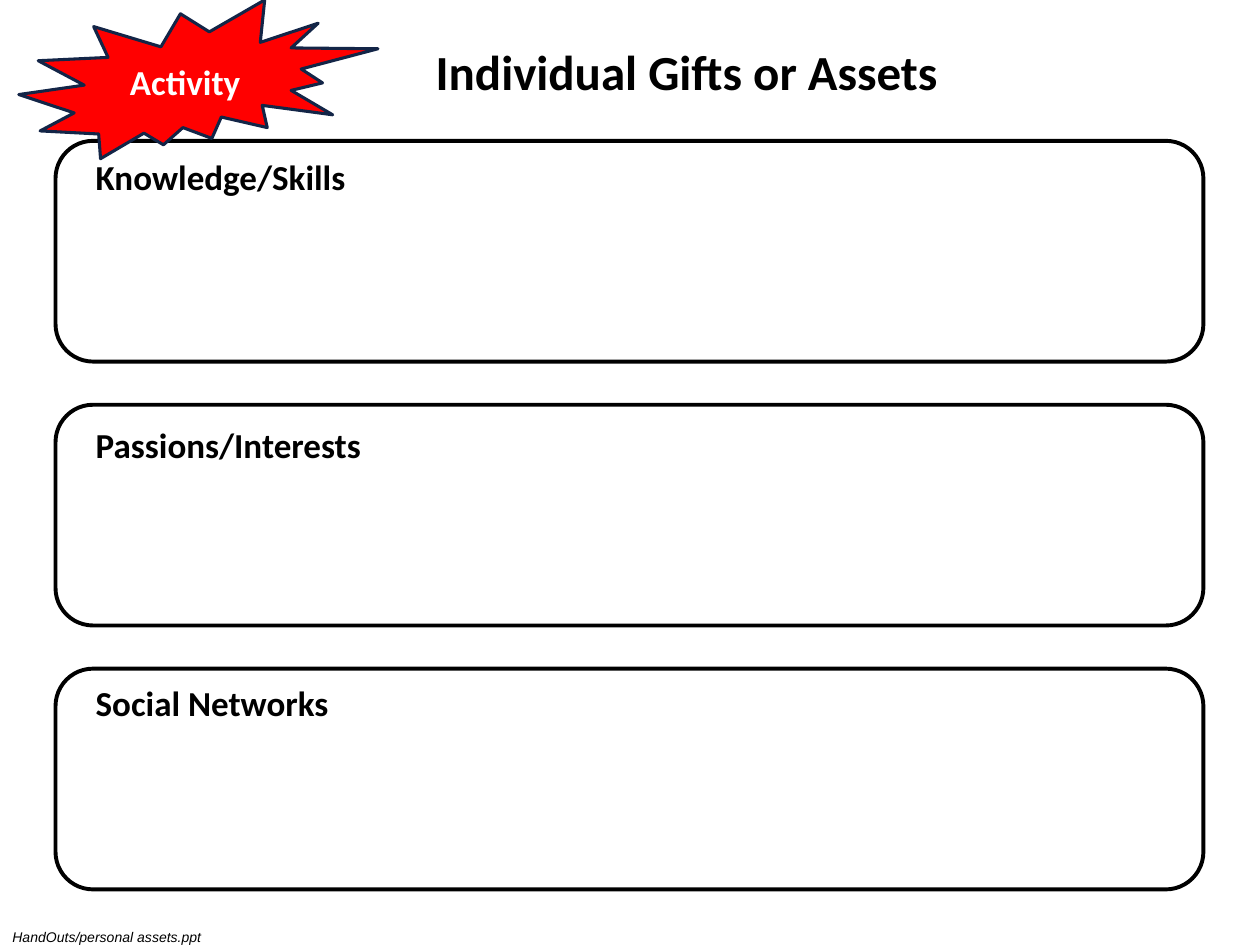
from dataclasses import dataclass

from pptx import Presentation
from pptx.dml.color import RGBColor
from pptx.enum.shapes import MSO_SHAPE
from pptx.enum.text import MSO_ANCHOR, PP_ALIGN
from pptx.util import Cm, Pt

TITLE = "Individual Gifts or Assets"
BADGE = "Activity"
FILE_NOTE = "HandOuts/personal assets.ppt"
# Heading of each answer panel and its drop below the panel's top edge, in cm
PANELS = [
    ("Knowledge/Skills", 0.18),
    ("Passions/Interests", 0.25),
    ("Social Networks", 0.13),
]

PANEL_LEFT, PANEL_TOP, PANEL_WIDTH, PANEL_HEIGHT = 1.12, 2.84, 23.14, 4.45
PANEL_PITCH = 5.32
HEADING_LEFT, HEADING_WIDTH, HEADING_HEIGHT = 1.68, 6.7, 1.12


@dataclass(frozen=True)
class Theme:
    ink: RGBColor = RGBColor(0, 0, 0)
    light: RGBColor = RGBColor(255, 255, 255)
    alert: RGBColor = RGBColor(255, 0, 0)
    alert_edge: RGBColor = RGBColor(0x13, 0x25, 0x47)
    font: str = "Calibri"
    note_font: str = "Arial"
    title_size: int = 28
    heading_size: int = 20
    note_size: int = 8
    panel_line: float = 2.25
    badge_line: float = 1.75


THEME = Theme()


def write(holder, text, size=THEME.heading_size, font=THEME.font, color=THEME.ink,
          bold=True, italic=False, align=PP_ALIGN.LEFT, anchor=MSO_ANCHOR.TOP, wrap=True):
    frame = holder.text_frame
    frame.word_wrap = wrap
    frame.vertical_anchor = anchor
    paragraph = frame.paragraphs[0]
    paragraph.alignment = align
    run = paragraph.add_run()
    run.text = text
    run.font.size, run.font.name = Pt(size), font
    run.font.bold, run.font.italic = bold, italic
    run.font.color.rgb = color


def cm_box(*lengths):
    return [Cm(length) for length in lengths]


def add_outlined(slide, preset, box, edge, weight, fill=None):
    outlined = slide.shapes.add_shape(preset, *cm_box(*box))
    outlined.shadow.inherit = False
    if fill is None:
        outlined.fill.background()
    else:
        outlined.fill.solid()
        outlined.fill.fore_color.rgb = fill
    outlined.line.color.rgb = edge
    outlined.line.width = Pt(weight)
    return outlined


def main():
    deck = Presentation()
    deck.slide_width, deck.slide_height = Cm(25.4), Cm(19.05)
    slide = deck.slides.add_slide(deck.slide_layouts[5])

    title = slide.shapes.title
    title.left, title.top, title.width, title.height = cm_box(8.53, 0.71, 15.04, 1.45)
    write(title, TITLE, size=THEME.title_size)

    for row, (heading, drop) in enumerate(PANELS):
        top = PANEL_TOP + row * PANEL_PITCH
        panel = add_outlined(slide, MSO_SHAPE.ROUNDED_RECTANGLE,
                             (PANEL_LEFT, top, PANEL_WIDTH, PANEL_HEIGHT),
                             THEME.ink, THEME.panel_line)
        panel.adjustments[0] = 0.17
        label = slide.shapes.add_textbox(
            *cm_box(HEADING_LEFT, top + drop, HEADING_WIDTH, HEADING_HEIGHT))
        write(label, heading)

    file_note = slide.shapes.add_textbox(*cm_box(0, 18.59, 8.53, 0.46))
    write(file_note, FILE_NOTE, size=THEME.note_size, font=THEME.note_font,
          bold=False, italic=True)

    badge = add_outlined(slide, MSO_SHAPE.EXPLOSION2, (0.38, 0, 7.24, 3.2),
                         THEME.alert_edge, THEME.badge_line, fill=THEME.alert)
    write(badge, BADGE, color=THEME.light, align=PP_ALIGN.CENTER, anchor=MSO_ANCHOR.MIDDLE)

    deck.save("out.pptx")


if __name__ == "__main__":
    main()
